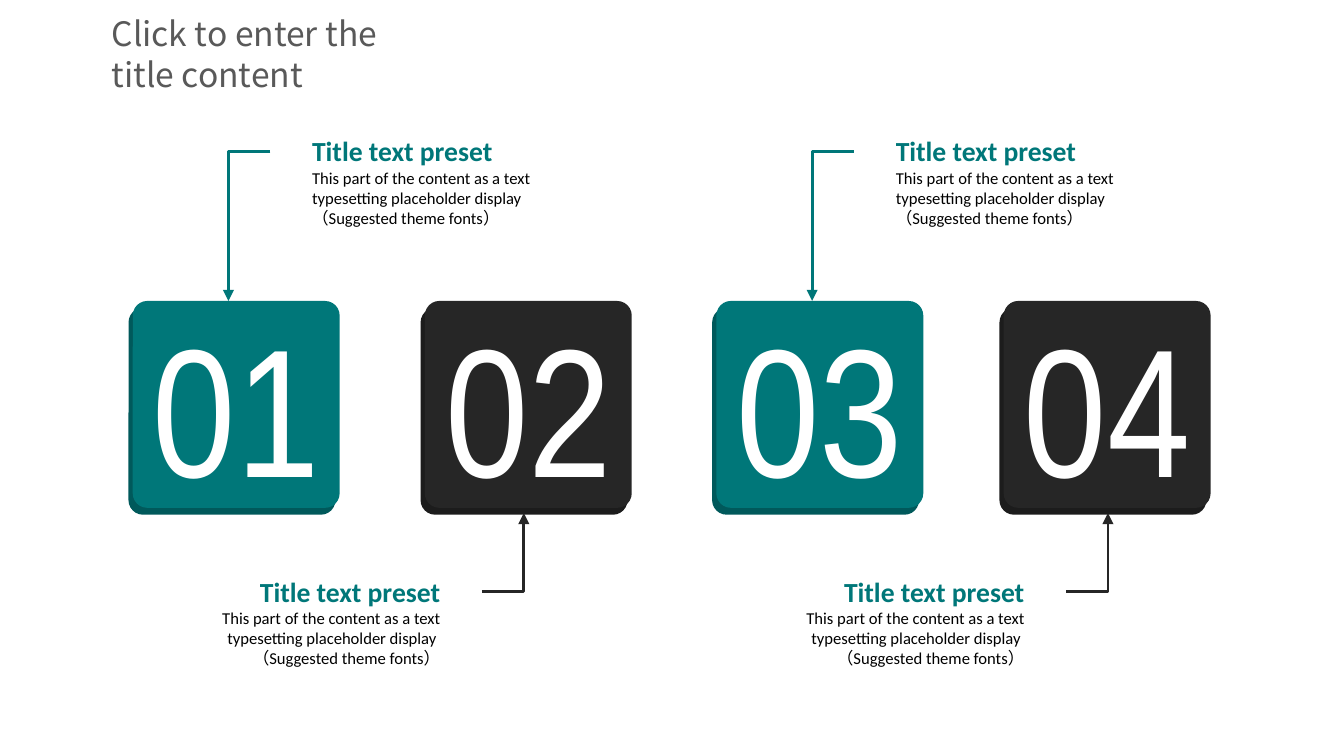
from lxml.etree import SubElement
from pptx import Presentation
from pptx.dml.color import RGBColor
from pptx.enum.shapes import MSO_CONNECTOR, MSO_SHAPE
from pptx.enum.text import MSO_ANCHOR, PP_ALIGN
from pptx.oxml.ns import qn
from pptx.util import Cm, Pt

TEAL = RGBColor(0x00, 0x77, 0x79)
DEEP = RGBColor(0x00, 0x59, 0x5B)
DARK = RGBColor(0x26, 0x26, 0x26)
BLACK = RGBColor(0x1C, 0x1C, 0x1C)
INK = RGBColor(0, 0, 0)
GREY = RGBColor(0x59, 0x59, 0x59)
WHITE = RGBColor(0xFF, 0xFF, 0xFF)

# Content: number, tile left and arrow position in cm, label above the tile
TITLE = "Click to enter the title content"
HEAD = "Title text preset"
BODY = ("This part of the content as a text typesetting placeholder display "
        "\v（Suggested theme fonts）")
STEPS = [
    ("01", 2.51, 4.32, True),
    ("02", 8.03, 9.90, False),
    ("03", 13.54, 15.35, True),
    ("04", 18.97, 20.94, False),
]

# Layout in cm
SIDE, TOP = 3.91, 5.69
SHIFT, DROP = 0.08, 0.13
ARM, WIDE = 0.79, 5.97
HEAD_H, BODY_H = 0.61, 1.17

deck = Presentation()
deck.slide_width, deck.slide_height = Cm(25.4), Cm(14.29)
slide = deck.slides.add_slide(deck.slide_layouts[6])
shapes = slide.shapes


def write(shape, text, size, color, font="Calibri", bold=False,
          align=PP_ALIGN.LEFT, wrap=True, pad=(0, 0)):
    frame = shape.text_frame
    frame.word_wrap = wrap
    frame.vertical_anchor = MSO_ANCHOR.MIDDLE
    frame.margin_left = frame.margin_right = Cm(pad[0])
    frame.margin_top = frame.margin_bottom = Cm(pad[1])
    para = frame.paragraphs[0]
    para.text = text
    para.alignment = align
    for run in para.runs:
        run.font.name, run.font.size = font, Pt(size)
        run.font.bold, run.font.color.rgb = bold, color


def add_text(x, y, w, h, text, size, color, **style):
    box = shapes.add_textbox(Cm(x), Cm(y), Cm(w), Cm(h))
    write(box, text, size, color, **style)


def add_tile(x, y, fill):
    tile = shapes.add_shape(MSO_SHAPE.ROUNDED_RECTANGLE,
                            Cm(x), Cm(y), Cm(SIDE), Cm(SIDE))
    tile.adjustments[0] = 0.07
    tile.shadow.inherit = False
    tile.fill.solid()
    tile.fill.fore_color.rgb = fill
    tile.line.fill.background()
    return tile


def add_arrow(x1, y1, x2, y2, color):
    link = shapes.add_connector(MSO_CONNECTOR.ELBOW,
                                Cm(x1), Cm(y1), Cm(x2), Cm(y2))
    link.line.color.rgb, link.line.width = color, Pt(1.5)
    props = link._element.spPr
    # One bend only, with an arrowhead at the tile
    props.find(qn("a:prstGeom")).set("prst", "bentConnector2")
    SubElement(props.find(qn("a:ln")), qn("a:tailEnd"), type="triangle")
    SubElement(props, qn("a:effectLst"))


# Slide title
add_text(2.11, 0.48, 5.92, 1.07, TITLE, 18, GREY,
         font="Noto Sans CJK SC", pad=(0, 0.13))

for num, left, mid, above in STEPS:
    # Numbered tile over its darker edge
    fill, edge = (TEAL, DEEP) if above else (DARK, BLACK)
    add_tile(left - SHIFT, TOP + DROP, edge)
    write(add_tile(left, TOP, fill), num, 97.8, WHITE,
          font="Arial Narrow", align=PP_ALIGN.CENTER, wrap=False)

    # Arrow and label, above on the right or below on the left
    if above:
        start, bend, tip, top = mid + ARM, 2.87, TOP, 2.54
        x, align = start, PP_ALIGN.LEFT
    else:
        start, bend, tip, top = mid - ARM, 11.18, 9.7, 10.87
        x, align = start - WIDE, PP_ALIGN.RIGHT
    add_arrow(start, bend, mid, tip, fill)
    add_text(x, top, WIDE, HEAD_H, HEAD, 14.8, TEAL,
             bold=True, align=align, wrap=False, pad=(0.79, 0))
    add_text(x, top + HEAD_H, WIDE, BODY_H, BODY, 8.9, INK,
             align=align, pad=(0.79, 0))

deck.save("out.pptx")
